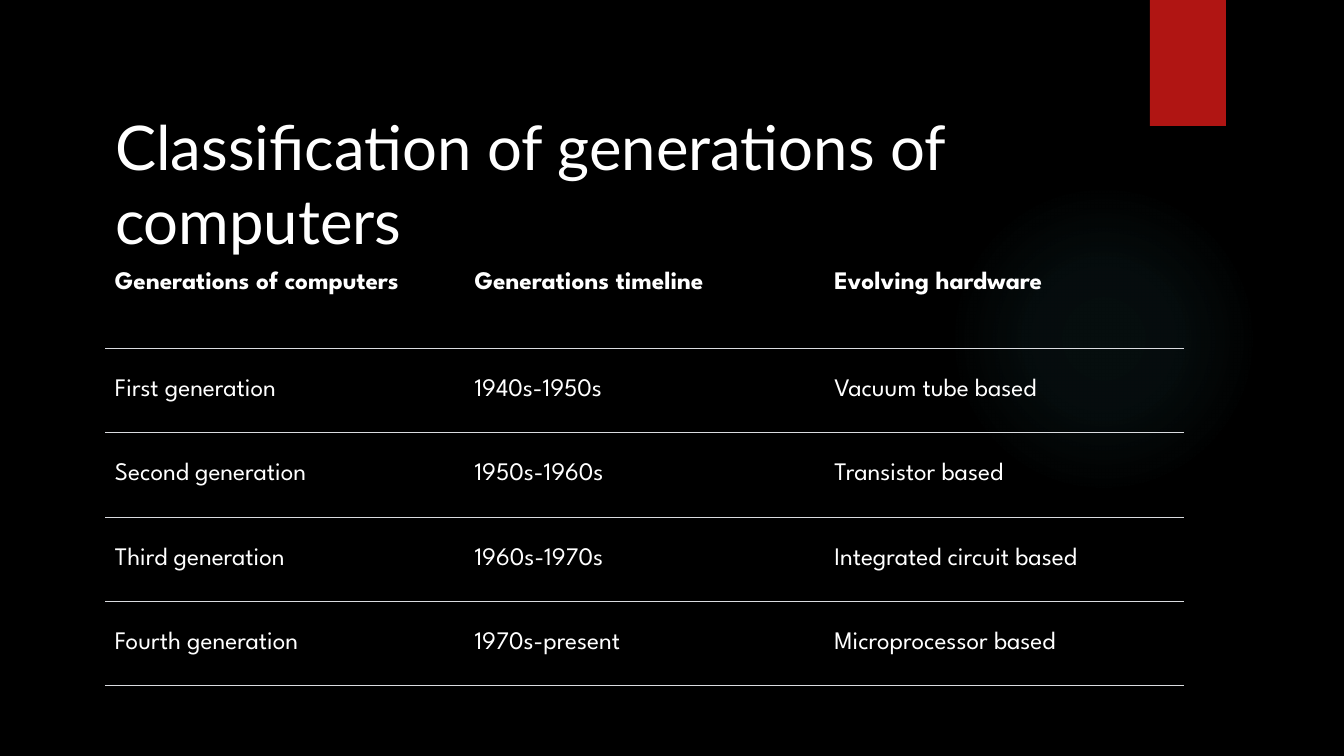
import pptx
import pptx.util
import pptx.dml.color
import pptx.enum.shapes
import pptx.enum.text
import pptx.oxml

TITLE = "Classification of generations of computers"
GENERATIONS = [
    ("Generations of computers", "Generations timeline", "Evolving hardware"),
    ("First generation", "1940s-1950s", "Vacuum tube based"),
    ("Second generation", "1950s-1960s", "Transistor based"),
    ("Third generation", "1960s-1970s", "Integrated circuit based"),
    ("Fourth generation", "1970s-present", "Microprocessor based"),
]
GLOW_STOPS = [(0, 7), (36, 6), (69, 0)]

BLACK, WHITE, RED, GLOW, RULE = "000000", "FFFFFF", "B01513", "50B9C1", "DADCE0"
TITLE_FONT, TABLE_FONT = "Lato", "League Spartan"
NS = 'xmlns:a="http://schemas.openxmlformats.org/drawingml/2006/main"'

SLIDE_BOX = (1344, 756)
GLOW_BOX = (949, 184, 310, 310)
RIBBON_BOX = (1150, 0, 76, 126)
TITLE_BOX = (105, 104, 1135, 85)
TABLE_BOX = (105, 264, 1079, 422)
CELL_INSETS = (10, 8, 10, 8)


def px(length):
    return round(length * 914400 / 100.8)


def color(hex_value):
    return pptx.dml.color.RGBColor.from_string(hex_value)


def add_run(paragraph, text, font, size, bold=False):
    run = paragraph.add_run()
    run.text = text
    run.font.name = font
    run.font.size = pptx.util.Pt(size)
    run.font.bold = bold
    run.font.color.rgb = color(WHITE)


def add_plain_shape(slide, kind, box):
    shape = slide.shapes.add_shape(kind, *map(px, box))
    shape.shadow.inherit = False
    shape.line.fill.background()
    shape.fill.solid()
    return shape


def add_glow(slide):
    glow = add_plain_shape(slide, pptx.enum.shapes.MSO_SHAPE.OVAL, GLOW_BOX)
    stops = "".join(
        f'<a:gs pos="{at * 1000}"><a:srgbClr val="{GLOW}">'
        f'<a:alpha val="{alpha * 1000}"/></a:srgbClr></a:gs>'
        for at, alpha in GLOW_STOPS
    )
    gradient = pptx.oxml.parse_xml(
        f'<a:gradFill {NS} rotWithShape="1"><a:gsLst>{stops}</a:gsLst><a:path path="circle">'
        '<a:fillToRect l="50000" t="50000" r="50000" b="50000"/></a:path></a:gradFill>'
    )
    properties = glow.element.spPr
    properties.replace(properties.find(pptx.oxml.ns.qn("a:solidFill")), gradient)


def add_title(slide):
    title = slide.shapes.title
    title.left, title.top, title.width, title.height = map(px, TITLE_BOX)
    frame = title.text_frame
    frame.word_wrap = True
    frame.auto_size = pptx.enum.text.MSO_AUTO_SIZE.SHAPE_TO_FIT_TEXT
    frame.vertical_anchor = pptx.enum.text.MSO_ANCHOR.TOP
    paragraph = frame.paragraphs[0]
    paragraph.alignment = pptx.enum.text.PP_ALIGN.LEFT
    add_run(paragraph, TITLE, TITLE_FONT, 44)


def set_borders(cell, is_header):
    ruled = f'<a:solidFill><a:srgbClr val="{RULE}"/></a:solidFill>'
    bare = "<a:noFill/>"
    sides = {"L": bare, "R": bare, "T": bare if is_header else ruled, "B": ruled}
    for side, stroke in sides.items():
        border = pptx.oxml.parse_xml(f'<a:ln{side} {NS} w="9525">{stroke}</a:ln{side}>')
        cell._tc.get_or_add_tcPr().append(border)


def add_generations(slide):
    row_count, column_count = len(GENERATIONS), len(GENERATIONS[0])
    table = slide.shapes.add_table(row_count, column_count, *map(px, TABLE_BOX)).table
    for column in table.columns:
        column.width = px(TABLE_BOX[2] / column_count)
    for row_index, generation in enumerate(GENERATIONS):
        is_header = row_index == 0
        table.rows[row_index].height = px(TABLE_BOX[3] / row_count)
        for column_index, text in enumerate(generation):
            cell = table.cell(row_index, column_index)
            set_borders(cell, is_header)
            cell.fill.background()
            cell.margin_left, cell.margin_top, cell.margin_right, cell.margin_bottom = map(
                px, CELL_INSETS
            )
            anchors = pptx.enum.text.MSO_ANCHOR
            cell.vertical_anchor = anchors.TOP if is_header else anchors.MIDDLE
            add_run(cell.text_frame.paragraphs[0], text, TABLE_FONT, 18, is_header)


def main():
    deck = pptx.Presentation()
    deck.slide_width, deck.slide_height = map(px, SLIDE_BOX)
    slide = deck.slides.add_slide(deck.slide_layouts[5])
    slide.background.fill.solid()
    slide.background.fill.fore_color.rgb = color(BLACK)
    add_glow(slide)
    ribbon = add_plain_shape(slide, pptx.enum.shapes.MSO_SHAPE.RECTANGLE, RIBBON_BOX)
    ribbon.fill.fore_color.rgb = color(RED)
    add_title(slide)
    add_generations(slide)
    deck.save("out.pptx")


if __name__ == "__main__":
    main()
